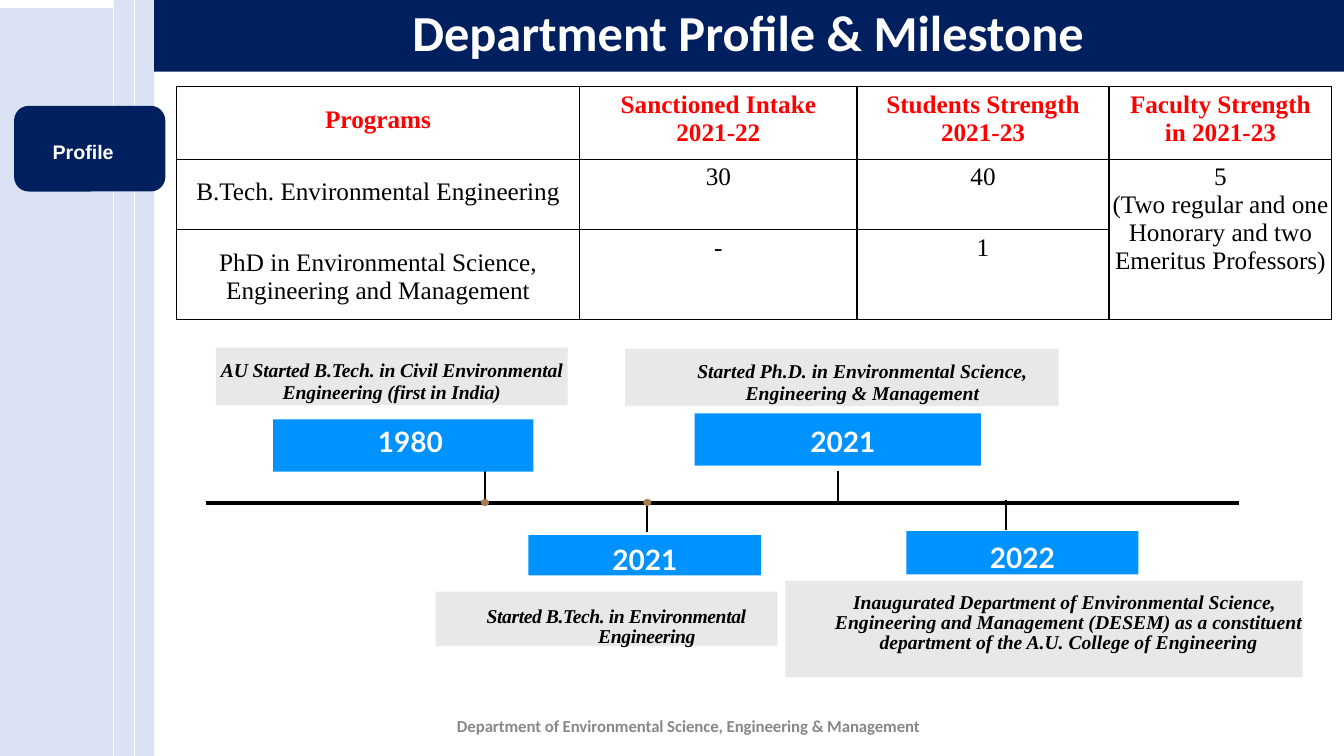
from lxml.etree import SubElement
from pptx import Presentation
from pptx.dml.color import RGBColor as RGB
from pptx.enum.shapes import MSO_CONNECTOR as CONN, MSO_SHAPE as SHAPE
from pptx.enum.text import MSO_ANCHOR as ANCHOR, PP_ALIGN as ALIGN
from pptx.oxml.ns import qn
from pptx.util import Inches, Pt

THEME = dict(
    navy="001F5F", pale="DAE2F3", blue="0092FF", grey="E6E6E6",
    bead="A67B52", black="000000",
    title=dict(name="Calibri", size=36, bold=True, color="FFFFFF"),
    badge=dict(name="Arial", size=14, bold=True, color="FFFFFF"),
    head=dict(name="Times New Roman", size=18, bold=True, color="FF0000"),
    body=dict(name="Times New Roman", size=18, bold=False, color="000000"),
    year=dict(name="Lato", size=20, bold=True, color="FFFFFF"),
    caption=dict(name="Times New Roman", size=14, bold=True, italic=True, color="000000"),
    footer=dict(name="Calibri", size=12, bold=True, color="888888"),
)
# Grid cells are a tenth of an inch: 133.3 columns by 75 rows
COLS, ROWS = 133.3, 75


def grid(*cells):
    return [Inches(c / 10) for c in cells]


def write(tf, text, style, align=ALIGN.CENTER, left=0, top=0.1, spc=0):
    frame = dict(word_wrap=True, vertical_anchor=ANCHOR.TOP, margin_right=0, margin_bottom=0)
    frame.update(zip(("margin_left", "margin_top"), grid(left, top)))
    for key, value in frame.items():
        setattr(tf, key, value)
    for i, line in enumerate(text.split("\n")):
        p = tf.paragraphs[0] if i == 0 else tf.add_paragraph()
        p.alignment = align
        r = p.add_run()
        r.text = line
        for key, value in THEME[style].items():
            if key == "color":
                r.font.color.rgb = RGB.from_string(value)
            else:
                setattr(r.font, key, Pt(value) if key == "size" else value)
        if spc:
            r.font._element.set("spc", str(spc))


prs = Presentation()
prs.slide_width, prs.slide_height = grid(COLS, ROWS)
s = prs.slides.add_slide(prs.slide_layouts[5])

# Side bands, title band, badge, year boxes, caption boxes and beads
RECT, ROUND, OVAL = SHAPE.RECTANGLE, SHAPE.ROUNDED_RECTANGLE, SHAPE.OVAL
blocks = [
    (RECT, (0, 0.8, 11.2, ROWS - 0.8), "pale", None),
    (RECT, (11.3, 0, 2, ROWS), "pale", None),
    (RECT, (13.4, 0, 1.9, ROWS), "pale", None),
    (RECT, (15.3, 0, COLS - 15.3, 7.1), "navy", None),
    (ROUND, (1.4, 10.5, 15, 8.5), "navy",
     ("Profile", "badge", ALIGN.LEFT, 3.4, 3)),
    (RECT, (27.1, 41.6, 25.8, 5.2), "blue", ("1980", "year", ALIGN.CENTER, 1.4, 0.5)),
    (RECT, (52.4, 53.1, 23.1, 4), "blue", ("2021", "year", ALIGN.CENTER, 0, 0.7)),
    (RECT, (68.9, 41, 28.4, 5.2), "blue", ("2021", "year", ALIGN.CENTER, 1, 1.1)),
    (RECT, (89.9, 52.7, 23, 4.3), "blue", ("2022", "year", ALIGN.CENTER, 0, 0.9)),
]
captions = [  # box, text, spacing, left margin, first indent, top inset, line height
    ((21.4, 34.5, 34.9, 5.7), "AU Started B.Tech. in Civil Environmental Engineering (first in India)",
     -10, 0, 0, 1.2, 15.6),
    ((43.2, 58.7, 33.9, 5.4), "Started B.Tech. in Environmental Engineering",
     -30, 8, -6.1, 1.5, 14.4),
    ((62, 34.6, 43, 5.7), "Started Ph.D. in Environmental Science, Engineering & Management",
     0, 4.1, 0, 1.2, 15.6),
    ((77.9, 57.6, 51.3, 9.6),
     "Inaugurated Department of Environmental Science, Engineering and Management (DESEM) "
     "as a constituent department of the A.U. College of Engineering",
     0, 4.9, -0.8, 1.2, 14.5),
]
for box, text, spc, margin, indent, top, height in captions:
    blocks.append((RECT, box, "grey", (text, "caption", ALIGN.CENTER, 0, top, spc)))

# Timeline and its stems
lines = [(20.4, 49.9, 122.9, 49.9, 3)]
for x, y1, y2 in [(48.1, 46.5, 49.6), (64.2, 49.8, 52.8), (83.1, 46.7, 49.8), (99.8, 49.6, 52.6)]:
    lines.append((x, y1, x, y2, 1.5))
for *ends, width in lines:
    c = s.shapes.add_connector(CONN.STRAIGHT, *grid(*ends))
    c.line.width = Pt(width)
    c.line.color.rgb = RGB.from_string(THEME["black"])
    SubElement(c._element.spPr, qn("a:effectLst"))
for x in (47.7, 63.8):
    blocks.append((OVAL, (x, 49.5, 0.8, 0.7), "bead", None))

drawn = []
for kind, box, color, label in blocks:
    sp = s.shapes.add_shape(kind, *grid(*box))
    sp.shadow.inherit = False
    sp.fill.solid()
    sp.fill.fore_color.rgb = RGB.from_string(THEME[color])
    sp.line.fill.background()
    if kind == ROUND:
        sp.adjustments[0] = 0.17
    if label:
        write(sp.text_frame, *label)
    if color == "grey":
        drawn.append(sp)

# Caption indents, line height and slight transparency
for sp, (_, _, _, margin, indent, _, height) in zip(drawn, captions):
    p = sp.text_frame.paragraphs[0]
    p.line_spacing = Pt(height)
    for key, value in zip(("marL", "indent"), grid(margin, indent)):
        p._p.get_or_add_pPr().set(key, str(value))
    rgb = sp._element.spPr.find(".//" + qn("a:srgbClr"))
    SubElement(rgb, qn("a:alpha")).set("val", "90000")

# Title, brought in front of its band
title = s.shapes.title
for key, value in zip(("left", "top", "width", "height"), grid(40.8, 0, 67, 6.3)):
    setattr(title, key, value)
write(title.text_frame, "Department Profile & Milestone", "title", ALIGN.LEFT, 0.1)
s.shapes._spTree.append(title._element)

# Programs table
rows = [
    ["Programs", "Sanctioned Intake\n2021-22", "Students Strength\n2021-23", "Faculty Strength\nin 2021-23"],
    ["B.Tech. Environmental Engineering", "30", "40",
     "5\n(Two regular and one Honorary and two Emeritus Professors)"],
    ["PhD in Environmental Science, Engineering and Management", "-", "1", ""],
]
widths, heights = grid(40, 27.5, 25, 22.1), grid(7.2, 7, 8.9)
table = s.shapes.add_table(3, 4, *grid(17.5, 8.6, 114.6, 23.1)).table
table.first_row = table.horz_banding = False
for col, width in zip(table.columns, widths):
    col.width = width
for i, (row, height) in enumerate(zip(rows, heights)):
    table.rows[i].height = height
    for j, text in enumerate(row):
        cell = table.cell(i, j)
        for key, value in zip(("margin_left", "margin_right", "margin_top", "margin_bottom"),
                              grid(0, 0, 0.4 if j else 1.9, 0)):
            setattr(cell, key, value)
        if text:
            tf = cell.text_frame
            write(tf, text, "body" if i else "head", ALIGN.CENTER)
        tcPr = cell._tc.get_or_add_tcPr()
        for side in ("a:lnL", "a:lnR", "a:lnT", "a:lnB"):
            ln = SubElement(tcPr, qn(side), w=str(Pt(1)))
            SubElement(SubElement(ln, qn("a:solidFill")), qn("a:srgbClr"), val=THEME["black"])
        cell.fill.background()
table.cell(1, 3).merge(table.cell(2, 3))

# Footer
footer = s.shapes.add_textbox(*grid(44.8, 70.9, 47, 2.2))
write(footer.text_frame, "Department of Environmental Science, Engineering & Management", "footer", spc=-5)

prs.save("out.pptx")
